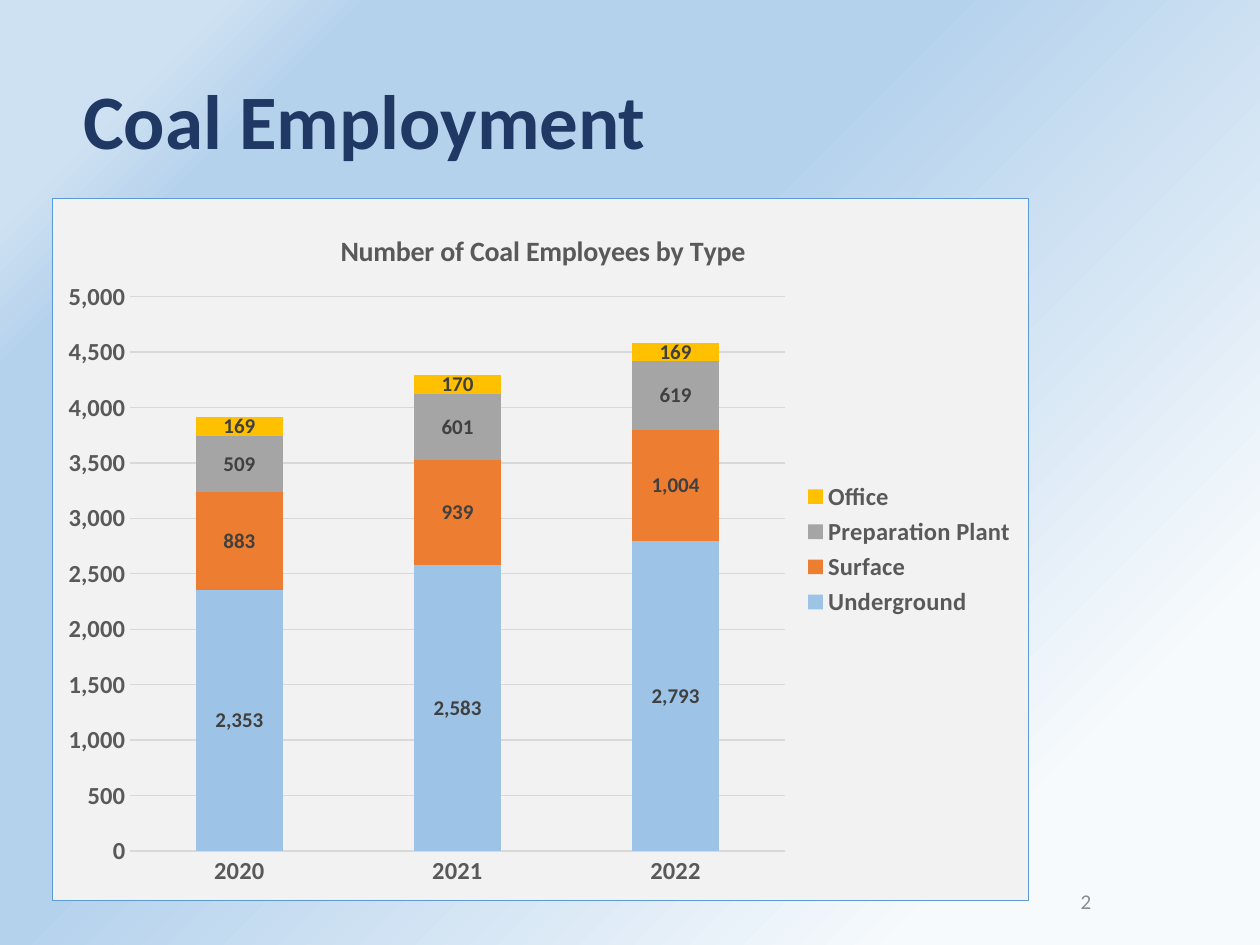
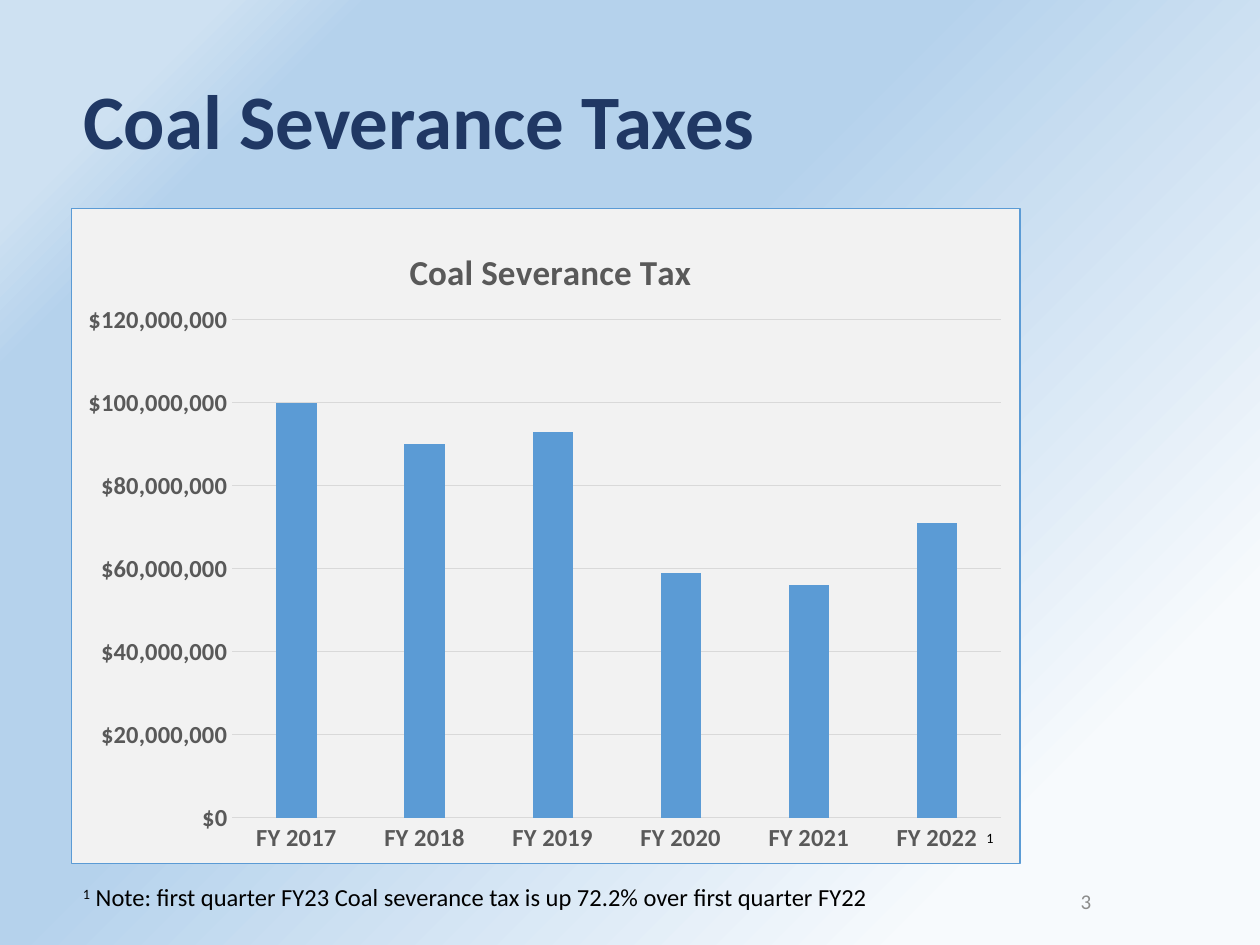
from lxml import etree
from pptx import Presentation
from pptx.chart import data
from pptx.dml import color
from pptx.enum import chart as kinds, text
from pptx.oxml import ns, parse_xml
from pptx.util import Inches, Pt

FACE = "Calibri"
NAVY, BLUE, GREY = "203864", "5B9BD5", "595959"
PALE, RULE = "F2F2F2", "D9D9D9"
STOPS = [(16, "F7FAFD"), (57, "B5D2EC"), (83, "B5D2EC"), (90, "CEE1F2")]
STAFF = [
    ("Underground", (2353, 2583, 2793), "9DC3E6"),
    ("Surface", (883, 939, 1004), "ED7D31"),
    ("Preparation Plant", (509, 601, 619), "A5A5A5"),
    ("Office", (169, 170, 169), "FFC000"),
]
TAXES = [("Series 1", [n * 1000000 for n in (100, 90, 93, 59, 56, 71)], BLUE)]


def rgb(code):
    return color.RGBColor.from_string(code)


def style(font, size, code, bold=False):
    font.name = FACE
    font.size = Pt(size)
    font.bold = bold
    font.color.rgb = rgb(code)


def set_back(master):
    fill = master.background.fill
    fill.gradient()
    grad = master.element.xpath("p:cSld/p:bg/p:bgPr/a:gradFill")[0]
    stops = grad.find(ns.qn("a:gsLst"))
    for stop in list(stops):
        stops.remove(stop)
    for spot, code in STOPS:
        stop = etree.SubElement(stops, ns.qn("a:gs"), pos=str(spot * 1000))
        etree.SubElement(stop, ns.qn("a:srgbClr"), val=code)
    fill.gradient_angle = 135


def add_text(slide, box, parts, size, code="000000"):
    frame = slide.shapes.add_textbox(*map(Inches, box)).text_frame
    frame.word_wrap = True
    para = frame.paragraphs[0]
    for words, raised in parts:
        run = para.add_run()
        run.text = words
        style(run.font, size, code)
        if raised:
            run._r.get_or_add_rPr().set("baseline", "30000")
    return frame


def add_page(deck, title, number):
    slide = deck.slides.add_slide(deck.slide_layouts[5])
    head = slide.shapes.title
    head.left, head.top, head.width, head.height = map(Inches, (0.56, 0.52, 8.88, 0.84))
    head.text_frame.text = title
    para = head.text_frame.paragraphs[0]
    para.alignment = text.PP_ALIGN.LEFT
    style(para.runs[0].font, 44, NAVY, True)
    foot = add_text(slide, (6.51, 6.95, 2.25, 0.4), [(str(number), False)], 12, "8C8C8C")
    foot.vertical_anchor = text.MSO_ANCHOR.MIDDLE
    foot.paragraphs[0].alignment = text.PP_ALIGN.RIGHT
    return slide


def place(part, index, spots):
    for old in part.findall(ns.qn("c:layout")):
        part.remove(old)
    layout = etree.Element(ns.qn("c:layout"))
    manual = etree.SubElement(layout, ns.qn("c:manualLayout"))
    if len(spots) == 4:
        etree.SubElement(manual, ns.qn("c:layoutTarget"), val="inner")
    for side in "xy":
        etree.SubElement(manual, ns.qn(f"c:{side}Mode"), val="edge")
    for side, spot in zip("xywh", spots):
        etree.SubElement(manual, ns.qn(f"c:{side}"), val=str(spot))
    part.insert(index, layout)


def frame_chart(chart):
    chart.element.find(ns.qn("c:chart")).addnext(parse_xml(
        f'<c:spPr {ns.nsdecls("c", "a")}>'
        f'<a:solidFill><a:srgbClr val="{PALE}"/></a:solidFill>'
        f'<a:ln w="9525"><a:solidFill><a:srgbClr val="{BLUE}"/></a:solidFill></a:ln>'
        '</c:spPr>'))


def rule(line):
    line.color.rgb = rgb(RULE)
    line.width = Pt(0.75)


def set_axes(chart, top, step, form):
    for axis in (chart.category_axis, chart.value_axis):
        axis.major_tick_mark = axis.minor_tick_mark = kinds.XL_TICK_MARK.NONE
        style(axis.tick_labels.font, 14, GREY, True)
    rule(chart.category_axis.format.line)
    axis = chart.value_axis
    axis.format.line.fill.background()
    rule(axis.major_gridlines.format.line)
    axis.minimum_scale, axis.maximum_scale, axis.major_unit = 0, top, step
    axis.tick_labels.number_format = form
    axis.tick_labels.number_format_is_linked = False


def add_bars(slide, kind, box, cats, rows, title, size, gap, lap, scale, head, plot):
    source = data.CategoryChartData()
    source.categories = cats
    for name, values, _ in rows:
        source.add_series(name, values)
    chart = slide.shapes.add_chart(kind, *map(Inches, box), source).chart
    style(chart.font, 10, "000000")
    frame_chart(chart)
    chart.has_legend = False
    frame = chart.chart_title.text_frame
    frame.text = title
    style(frame.paragraphs[0].runs[0].font, size, GREY, True)
    place(chart.element.xpath("c:chart/c:title")[0], 1, head)
    place(chart.element.xpath("c:chart/c:plotArea")[0], 0, plot)
    set_axes(chart, *scale)
    bars = chart.plots[0]
    bars.gap_width, bars.overlap = gap, lap
    bars.vary_by_categories = False
    for series, row in zip(bars.series, rows):
        series.format.fill.solid()
        series.format.fill.fore_color.rgb = rgb(row[2])
    return chart


def add_legend(chart):
    chart.has_legend = True
    chart.legend.position = kinds.XL_LEGEND_POSITION.RIGHT
    chart.legend.include_in_layout = False
    style(chart.legend.font, 14, GREY, True)


def add_labels(chart):
    for series in chart.plots[0].series:
        labels = series.data_labels
        labels.show_value = True
        labels.number_format = "#,##0"
        labels.number_format_is_linked = False
        style(labels.font, 12, "404040", True)


def main():
    deck = Presentation()
    deck.slide_width, deck.slide_height = Inches(10), Inches(7.5)
    set_back(deck.slide_master)

    slide = add_page(deck, "Coal Employment", 2)
    chart = add_bars(
        slide, kinds.XL_CHART_TYPE.COLUMN_STACKED, (0.41, 1.57, 7.76, 5.58),
        ["2020", "2021", "2022"], STAFF, "Number of Coal Employees by Type", 16,
        150, 100, (5000, 500, "#,##0"), (0.29, 0.04), (0.08, 0.14, 0.67, 0.79))
    add_legend(chart)
    add_labels(chart)

    slide = add_page(deck, "Coal Severance Taxes", 3)
    add_bars(
        slide, kinds.XL_CHART_TYPE.COLUMN_CLUSTERED, (0.56, 1.65, 7.54, 5.21),
        [f"FY {year}" for year in range(2017, 2023)], TAXES, "Coal Severance Tax", 20,
        219, -27, (120000000, 20000000, '"$"#,##0'), (0.35, 0.05), (0.17, 0.17, 0.81, 0.76))
    note = " Note: first quarter FY23 Coal severance tax is up 72.2% over first quarter FY22"
    add_text(slide, (0.56, 6.95, 7.17, 0.34), [("1", True), (note, False)], 14)
    add_text(slide, (7.73, 6.51, 0.25, 0.26), [("1", True)], 14)

    deck.save("out.pptx")


if __name__ == "__main__":
    main()
